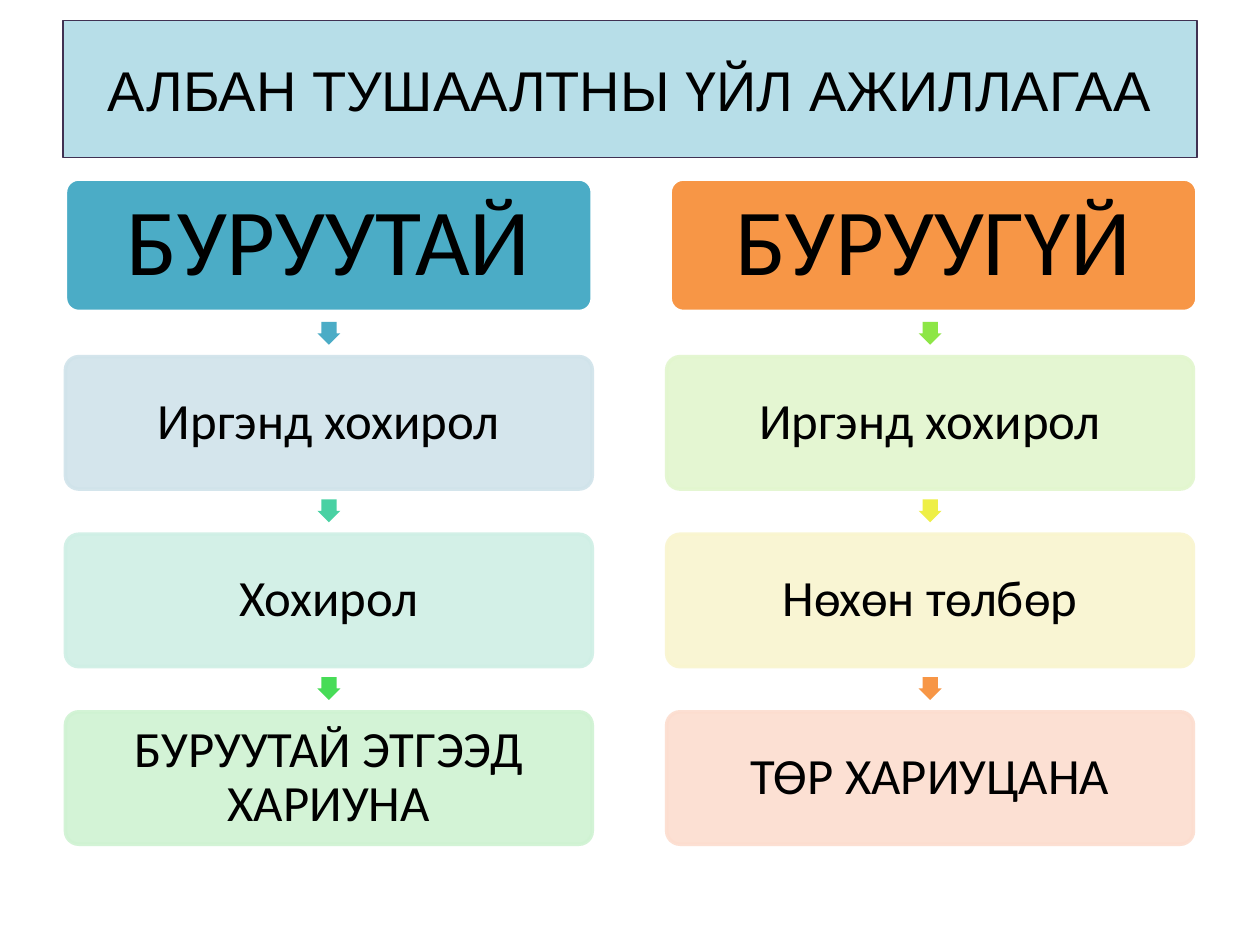
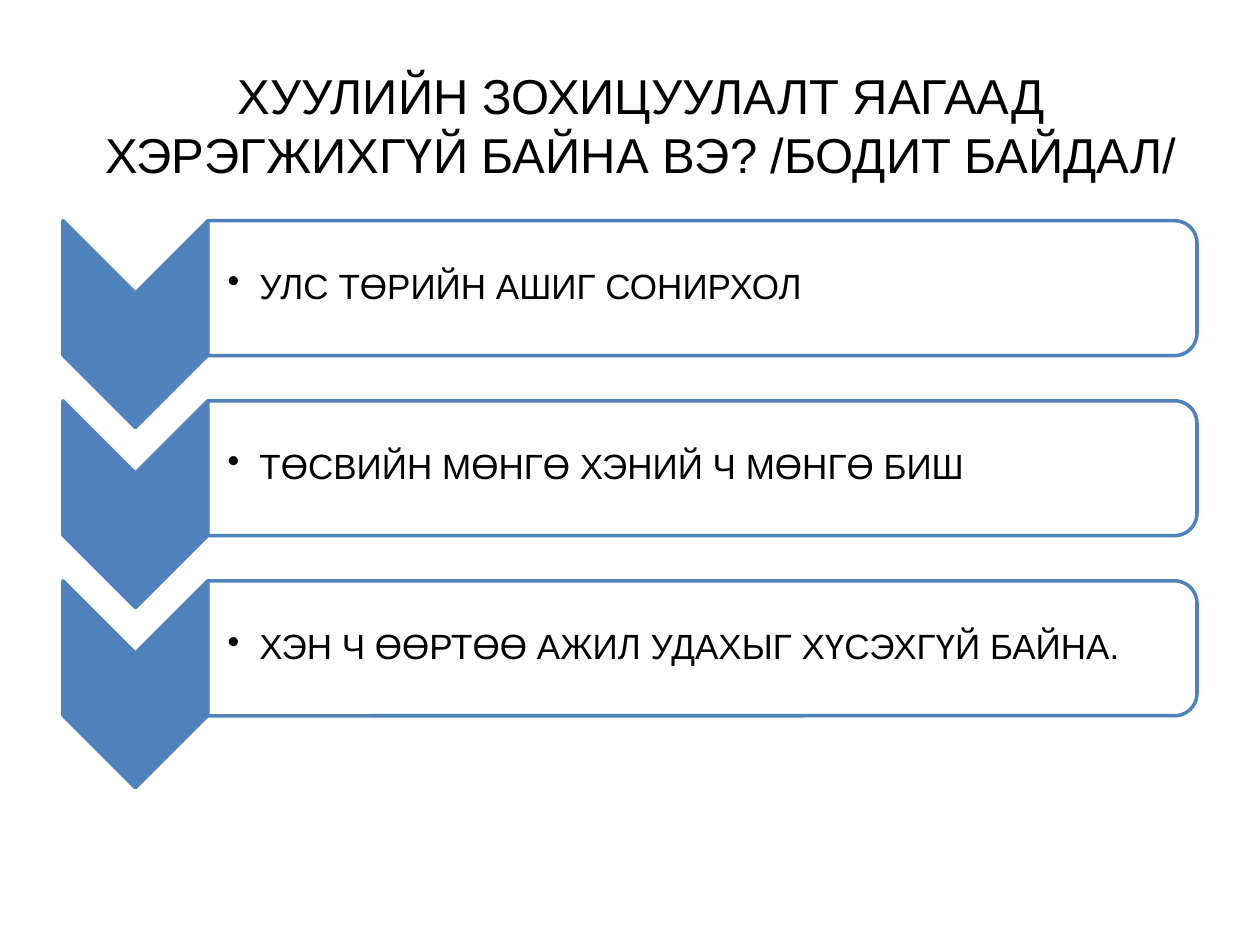
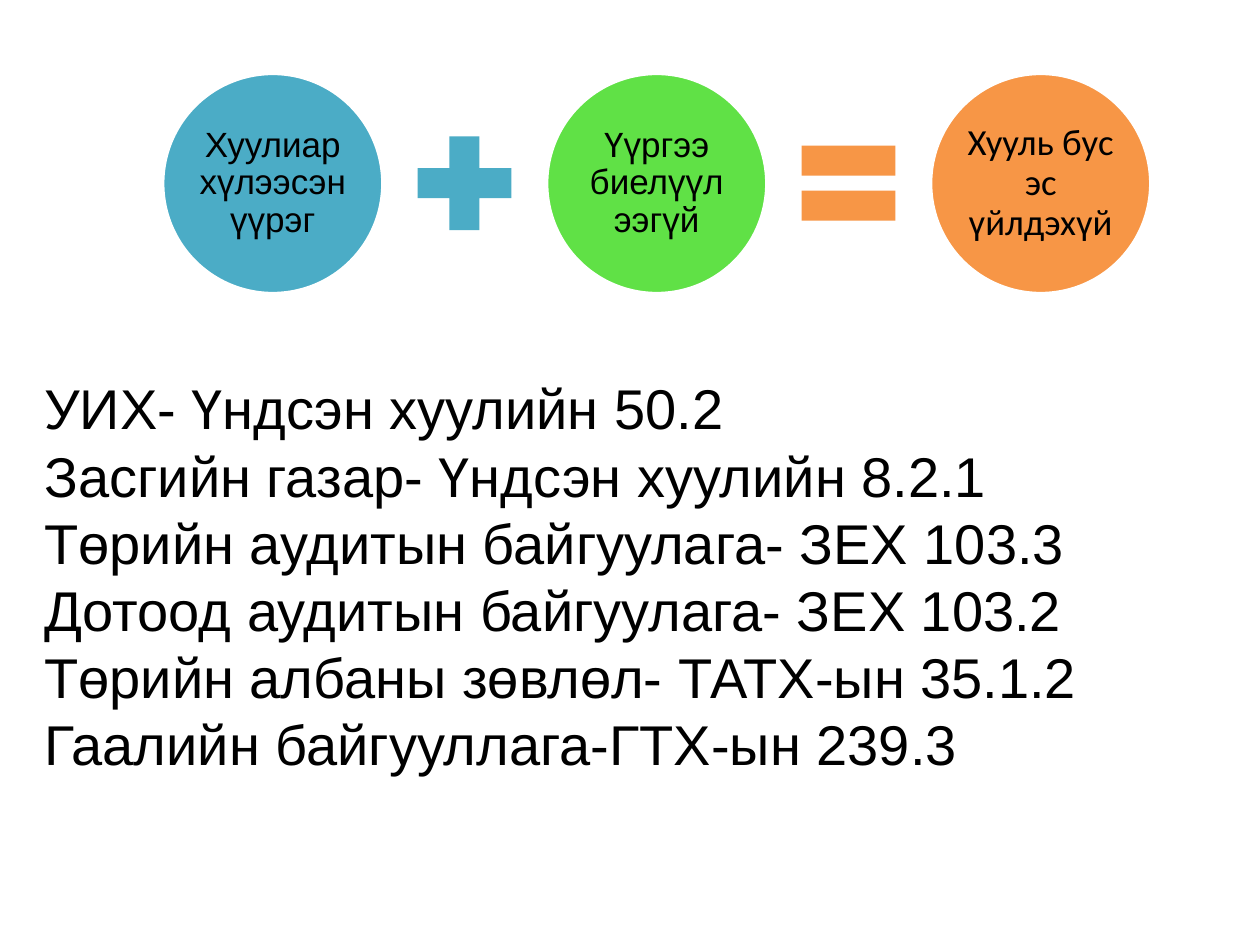
import lxml.etree
import pptx
import pptx.dml.color
import pptx.enum.shapes
import pptx.enum.text
import pptx.oxml.ns
import pptx.util

Cm = pptx.util.Cm
Pt = pptx.util.Pt
MSO = pptx.enum.shapes.MSO_SHAPE
ALIGN = pptx.enum.text.PP_ALIGN
qn = pptx.oxml.ns.qn

BLUE, TEAL, GREEN, ORANGE = "4F81BD", "4BACC6", "60E146", "F79646"
WHITE, BLACK = "FFFFFF", "000000"


def paint(sp, fill, line=None, width=2, alpha=100, line_alpha=100):
    sp.shadow.inherit = False
    if line is None:
        sp.line.fill.background()
    else:
        sp.line.width = Pt(width)
    for part, color, opacity in ((sp.fill, fill, alpha), (sp.line.fill, line, line_alpha)):
        if color is None:
            continue
        part.solid()
        part.fore_color.rgb = pptx.dml.color.RGBColor.from_string(color)
        if opacity < 100:
            clr = sp._element.spPr.findall(".//" + qn("a:srgbClr"))[-1]
            lxml.etree.SubElement(clr, qn("a:alpha"), val=str(opacity * 1000))


def write(sp, text, size, font="Arial", align=ALIGN.CENTER, spacing=None, margins=None):
    tf = sp.text_frame
    tf.text = text
    frame = {"word_wrap": True, "auto_size": pptx.enum.text.MSO_AUTO_SIZE.NONE,
             "vertical_anchor": pptx.enum.text.MSO_ANCHOR.MIDDLE}
    if margins is not None:
        for side, m in zip(("left", "top", "right", "bottom"), margins):
            frame["margin_" + side] = Cm(m)
    for name, value in frame.items():
        setattr(tf, name, value)
    for p in tf.paragraphs:
        p.alignment = align
        p.line_spacing = spacing
        for r in p.runs:
            for name, value in {"name": font, "size": Pt(size)}.items():
                setattr(r.font, name, value)
            r.font.color.rgb = pptx.dml.color.RGBColor.from_string(BLACK)


prs = pptx.Presentation()
prs.slide_width, prs.slide_height = Cm(25.4), Cm(19.05)

titles = [
    ("АЛБАН ТУШААЛТНЫ ҮЙЛ АЖИЛЛАГАА", 32, ALIGN.CENTER, (1.27, 0.42, 22.86, 2.75)),
    ("ХУУЛИЙН ЗОХИЦУУЛАЛТ ЯАГААД ХЭРЭГЖИХГҮЙ БАЙНА ВЭ? /БОДИТ БАЙДАЛ/",
     28, ALIGN.CENTER, (1.27, 0.76, 23.3, 3.48)),
    ("УИХ- Үндсэн хуулийн 50.2\n"
     "Засгийн газар- Үндсэн хуулийн 8.2.1\n"
     "Төрийн аудитын байгуулага- ЗЕХ 103.3\n"
     "Дотоод аудитын байгуулага- ЗЕХ 103.2\n"
     "Төрийн албаны зөвлөл- ТАТХ-ын 35.1.2\n"
     "Гаалийн байгууллага-ГТХ-ын 239.3", 32, ALIGN.LEFT, (0.64, 6.35, 24.33, 10.5)),
]
for text, size, align, box in titles:
    sl = prs.slides.add_slide(prs.slide_layouts[5])
    sp = sl.shapes.title
    for name, value in zip(("left", "top", "width", "height"), box):
        setattr(sp, name, Cm(value))
    write(sp, text, size, align=align)

actions, reasons, formula = prs.slides

paint(actions.shapes.title, "B7DEE8", "403152", 0.75)
columns = [
    (1.32, 1.32, "БУРУУТАЙ", TEAL, [
        ("Иргэнд хохирол", "D0E3EA", TEAL),
        ("Хохирол", "CFEFE5", "49D1A3"),
        ("БУРУУТАЙ ЭТГЭЭД ХАРИУНА", "CFF2D2", "47DC57")]),
    (13.51, 13.44, "БУРУУГҮЙ", ORANGE, [
        ("Иргэнд хохирол", "E2F6CE", "8DE646"),
        ("Нөхөн төлбөр", "F9F5CF", "EEEF46"),
        ("ТӨР ХАРИУЦАНА", "FCDDCF", ORANGE)]),
]
top, step, width, height, arrow = 3.61, 3.58, 10.62, 2.67, 0.46
for head_left, left, head, color, steps in columns:
    sp = actions.shapes.add_shape(MSO.ROUNDED_RECTANGLE, *map(Cm, (head_left, top, width, height)))
    sp.adjustments[0] = 0.1
    paint(sp, color, WHITE)
    write(sp, head, 54, "Calibri", spacing=0.9, margins=[0.18] * 4)
    for i, (text, fill, arrow_fill) in enumerate(steps):
        y = top + i * step
        sp = actions.shapes.add_shape(
            MSO.RIGHT_ARROW, *map(Cm, (left + (width - arrow) / 2, y + 2.88, arrow, arrow)))
        sp.rotation = 90
        sp.adjustments[0] = 0.667
        paint(sp, arrow_fill)
        sp = actions.shapes.add_shape(
            MSO.ROUNDED_RECTANGLE, *map(Cm, (left, y + step, width, height)))
        sp.adjustments[0] = 0.1
        paint(sp, fill, fill, alpha=90, line_alpha=90)
        write(sp, text, 29, "Calibri", spacing=0.9, margins=[0.1] * 4)

causes = ["УЛС ТӨРИЙН АШИГ СОНИРХОЛ", "ТӨСВИЙН МӨНГӨ ХЭНИЙ Ч МӨНГӨ БИШ",
          "ХЭН Ч ӨӨРТӨӨ АЖИЛ УДАХЫГ ХҮСЭХГҮЙ БАЙНА."]
for i, text in enumerate(causes):
    y = 4.45 + i * 3.63
    for kind, x, w, h, fill, alpha in (
            (MSO.CHEVRON, 1.27, 2.92, 4.17, BLUE, 100),
            (MSO.ROUND_2_SAME_RECTANGLE, 4.19, 19.94, 2.72, WHITE, 90)):
        sp = reasons.shapes.add_shape(kind, *map(Cm, (x + (w - h) / 2, y + (h - w) / 2, h, w)))
        sp.rotation = 90
        paint(sp, fill, BLUE, alpha=alpha)
    sp = reasons.shapes.add_textbox(*map(Cm, (4.19, y + 0.13, 19.81, 2.44)))
    write(sp, text, 20, align=ALIGN.LEFT, spacing=0.9, margins=(0.4, 0.03, 0.03, 0.03))
    pPr = sp.text_frame.paragraphs[0]._p.get_or_add_pPr()
    pPr.set("marL", str(Cm(0.64)))
    pPr.set("indent", str(Cm(-0.64)))
    lxml.etree.SubElement(pPr, qn("a:buChar"), char="•")

terms = [
    ("Хуулиар хүлээсэн үүрэг", 20, "Arial", TEAL, MSO.MATH_PLUS, TEAL),
    ("Үүргээ биелүүлээгүй", 20, "Arial", GREEN, MSO.MATH_EQUAL, ORANGE),
    ("Хууль бус эс үйлдэхүй", 21, "Calibri", ORANGE, None, None),
]
for i, (text, size, font, fill, sign, sign_fill) in enumerate(terms):
    x = 3.28 + i * 7.74
    sp = formula.shapes.add_shape(MSO.OVAL, *map(Cm, (x, 1.48, 4.44, 4.44)))
    paint(sp, fill, WHITE)
    write(sp, text, size, font, spacing=0.9, margins=[0.08] * 4)
    if sign is not None:
        sp = formula.shapes.add_shape(sign, *map(Cm, (x + 4.8, 2.41, 2.57, 2.57)))
        paint(sp, sign_fill)

prs.save("out.pptx")
